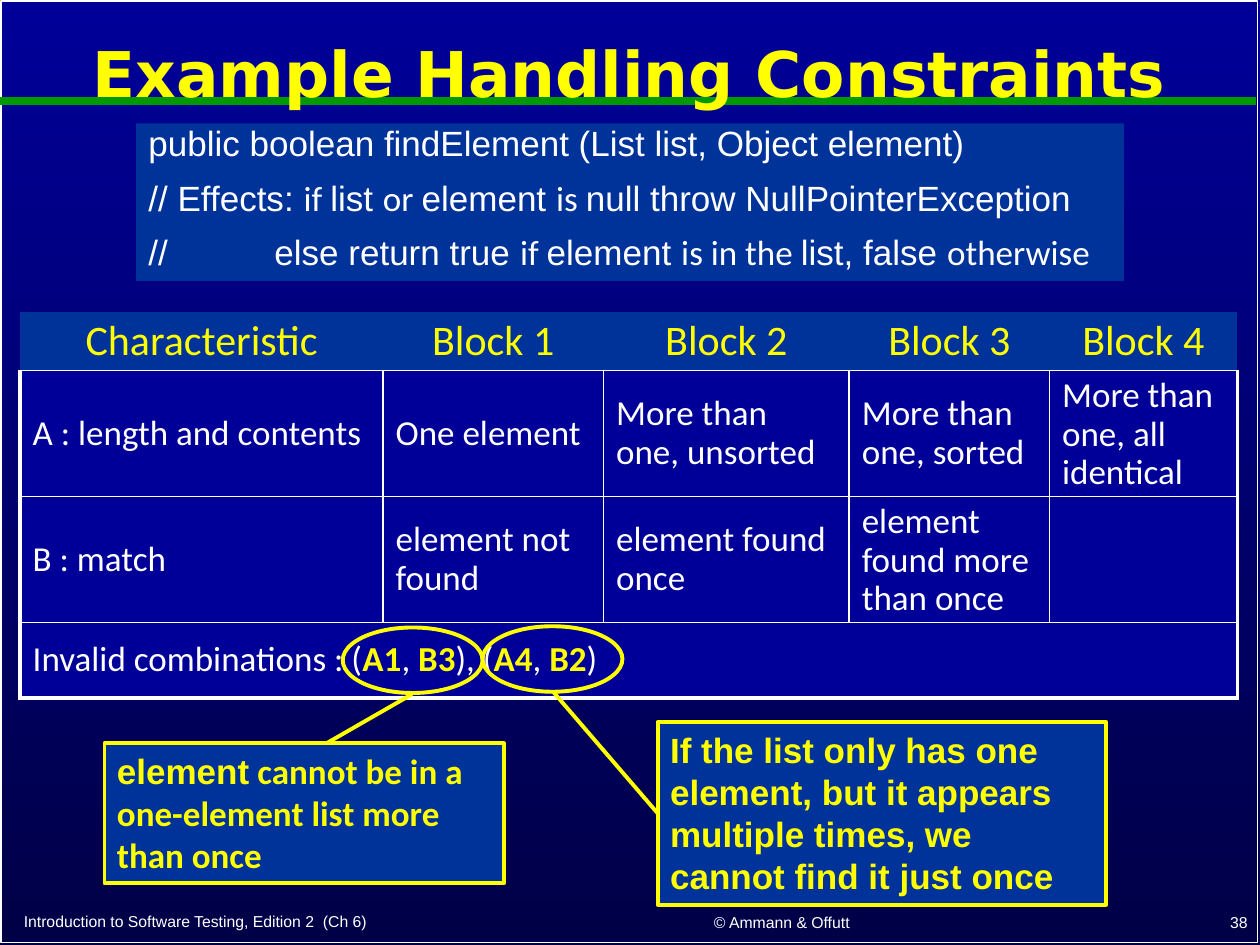
from dataclasses import dataclass

from lxml.etree import SubElement
from pptx import Presentation
from pptx.dml.color import RGBColor
from pptx.enum.shapes import MSO_CONNECTOR, MSO_SHAPE
from pptx.enum.text import MSO_ANCHOR, PP_ALIGN
from pptx.oxml.ns import qn
from pptx.util import Inches, Pt

COLORS = {
    "white": "FFFFFF", "yellow": "FFFF00", "green": "009900",
    "panel": "003399", "cell": "000099", "night": "000047",
}
NO_GRID_STYLE = "{2D5ABB26-0587-4C30-8999-92F81FD0307C}"
THIN, THICK = 1, 2.25


@dataclass
class Run:
    text: str
    font: str = "Arial"
    color: str = "white"
    bold: bool = False


@dataclass
class Callout:
    ellipse: tuple
    box: tuple
    line_start: tuple
    line_end: tuple
    joins_left_side: bool
    runs: list


def rgb(name: str) -> RGBColor:
    return RGBColor.from_string(COLORS[name])


def write_text(frame, paragraphs, *, size=20, align=PP_ALIGN.LEFT, spacing=1.0,
               before=0, anchor=MSO_ANCHOR.TOP, wrap=True):
    """Write lists of runs, one list a paragraph."""
    frame.word_wrap = wrap
    frame.vertical_anchor = anchor
    for index, runs in enumerate(paragraphs):
        paragraph = frame.add_paragraph() if index else frame.paragraphs[0]
        paragraph.alignment = align
        paragraph.line_spacing = spacing
        paragraph.space_before = Pt(before)
        for item in runs:
            run = paragraph.add_run()
            run.text = item.text
            run.font.name = item.font
            run.font.size = Pt(size)
            run.font.bold = item.bold
            run.font.color.rgb = rgb(item.color)


def add_label(slide, box, run: Run, **text_format):
    label = slide.shapes.add_textbox(*map(Inches, box))
    write_text(label.text_frame, [[run]], **text_format)


def add_outline(slide, kind, box, *, fill=None, line=None, width=THICK):
    shape = slide.shapes.add_shape(kind, *map(Inches, box))
    shape.shadow.inherit = False
    if fill:
        shape.fill.solid()
        shape.fill.fore_color.rgb = rgb(fill)
    else:
        shape.fill.background()
    if line:
        shape.line.color.rgb = rgb(line)
        shape.line.width = Pt(width)
    else:
        shape.line.fill.background()
    return shape


def add_line(slide, start, end, color: str, width: float):
    line = slide.shapes.add_connector(MSO_CONNECTOR.STRAIGHT, *map(Inches, start + end))
    line.line.color.rgb = rgb(color)
    line.line.width = Pt(width)
    SubElement(line._element.spPr, qn("a:effectLst"))
    return line


def add_callout(slide, callout: Callout):
    add_outline(slide, MSO_SHAPE.OVAL, callout.ellipse, line="yellow")
    line = add_line(slide, callout.line_start, callout.line_end, "yellow", THICK)
    box = add_outline(slide, MSO_SHAPE.RECTANGLE, callout.box, fill="panel", line="yellow")
    write_text(box.text_frame, [callout.runs])
    if callout.joins_left_side:
        line.end_connect(box, 1)


def style_cell(cell, fill: str, borders: dict):
    properties = cell._tc.get_or_add_tcPr()
    for side in "LRTB":
        if side in borders:
            line = SubElement(properties, qn(f"a:ln{side}"), w=str(Pt(borders[side])))
            solid = SubElement(line, qn("a:solidFill"))
            SubElement(solid, qn("a:srgbClr"), val=COLORS["white"])
    cell.fill.solid()
    cell.fill.fore_color.rgb = rgb(fill)


def add_partition_table(slide, rows, combinations, widths, heights):
    last_row, last_column = len(heights) - 1, len(widths) - 1
    frame = slide.shapes.add_table(len(heights), len(widths), Inches(0.16), Inches(2.48),
                                   Inches(sum(widths)), Inches(sum(heights)))
    table = frame.table
    table.first_row = table.horz_banding = False
    table._tbl.tblPr.find(qn("a:tableStyleId")).text = NO_GRID_STYLE
    for column, width in zip(table.columns, widths):
        column.width = Inches(width)
    for row, height in zip(table.rows, heights):
        row.height = Inches(height)
    table.cell(last_row, 0).merge(table.cell(last_row, last_column))

    for r in range(last_row + 1):
        for c in range(last_column + 1):
            cell = table.cell(r, c)
            if r == 0:
                style_cell(cell, "panel", {"B": THIN})
            else:
                borders = {"T": THIN, "B": THICK if r == last_row else THIN}
                if r < last_row or c == 0:
                    borders["L"] = THIN if c else THICK
                if r < last_row or c in (0, last_column):
                    borders["R"] = THICK if c == last_column or r == last_row else THIN
                style_cell(cell, "cell", borders)
            cell.vertical_anchor = MSO_ANCHOR.MIDDLE
            if r < last_row and rows[r][c]:
                run = Run(rows[r][c], "Calibri", "white" if r else "yellow")
                write_text(cell.text_frame, [[run]], size=20 if r else 24, spacing=0.9,
                           align=PP_ALIGN.LEFT if r else PP_ALIGN.CENTER,
                           anchor=MSO_ANCHOR.MIDDLE)
    write_text(table.cell(last_row, 0).text_frame, [combinations], spacing=0.9,
               anchor=MSO_ANCHOR.MIDDLE)


def main():
    presentation = Presentation()
    presentation.slide_width, presentation.slide_height = Inches(10), Inches(7.5)
    slide = presentation.slides.add_slide(presentation.slide_layouts[6])

    # Background, frame and title rule
    background = slide.background.fill
    background.gradient()
    background.gradient_angle = 270
    for stop, color in zip(background.gradient_stops, ("cell", "night")):
        stop.color.rgb = rgb(color)
    add_outline(slide, MSO_SHAPE.RECTANGLE, (0.01, 0.01, 9.97, 7.47), line="white", width=THIN)
    add_line(slide, (0, 0.8), (9.97, 0.8), "green", 4.5)

    # Footer and title
    footers = [
        ((4.62, 7.17, 3.17, 0.27), "© Ammann & Offutt", PP_ALIGN.CENTER),
        ((7.92, 7.16, 2.08, 0.28), "38", PP_ALIGN.RIGHT),
        ((0.09, 7.18, 4.31, 0.26), "Introduction to Software Testing, Edition 2  (Ch 6)", PP_ALIGN.LEFT),
    ]
    for box, text, align in footers:
        add_label(slide, box, Run(text), size=9, align=align, anchor=MSO_ANCHOR.BOTTOM)
    add_label(slide, (0.09, 0.11, 9.81, 1),
              Run("Example Handling Constraints", "DejaVu Sans", "yellow", True),
              size=36, align=PP_ALIGN.CENTER, spacing=0.9, anchor=MSO_ANCHOR.MIDDLE)

    # Method signature and its effects
    code = add_outline(slide, MSO_SHAPE.RECTANGLE, (1.08, 0.98, 7.84, 1.25), fill="panel")
    write_text(code.text_frame, [
        [Run("public boolean findElement (List list, Object element)")],
        [Run("// Effects: "), Run("if ", "Calibri"), Run("list "), Run("or ", "Calibri"),
         Run("element "), Run("is ", "Calibri"), Run("null throw NullPointerException")],
        [Run("//\telse return true "), Run("if ", "Calibri"), Run("element "),
         Run("is in the ", "Calibri"), Run("list, false "), Run("otherwise", "Calibri")],
    ], spacing=0.8, before=12)
    tabs = SubElement(code.text_frame.paragraphs[2]._p.get_or_add_pPr(), qn("a:tabLst"))
    SubElement(tabs, qn("a:tab"), pos=str(Inches(1)), algn="l")

    # Characteristics, blocks and invalid combinations
    rows = [
        ["Characteristic"] + [f"Block {number}" for number in range(1, 5)],
        ["A : length and contents", "One element", "More than one, unsorted",
         "More than one, sorted", "More than one, all identical"],
        ["B : match", "element not found", "element found once",
         "element found more than once", ""],
    ]
    pieces = ["Invalid combinations : (", "A1", ", ", "B3", "), (", "A4", ", ", "B2", ")"]
    combinations = [Run(text, "Calibri", "yellow" if index % 2 else "white", index % 2 == 1)
                    for index, text in enumerate(pieces)]
    add_partition_table(slide, rows, combinations,
                        widths=[2.88, 1.75, 1.95, 1.59, 1.49], heights=[0.46, 1, 1, 0.6])

    # Why each combination is invalid
    callouts = [
        Callout((2.72, 4.98, 1.11, 0.52), (0.83, 5.9, 3.17, 1.11), (3.27, 5.51), (2.59, 5.9), False,
                [Run("element", "Arial", "yellow", True),
                 Run(" cannot be in a one-element list more than once", "Calibri", "yellow", True)]),
        Callout((3.83, 4.97, 1.11, 0.52), (5.22, 5.73, 3.56, 1.45), (4.39, 5.49), (5.22, 6.44), True,
                [Run("If the list only has one element, but it appears multiple times, "
                     "we cannot find it just once", "Arial", "yellow", True)]),
    ]
    for callout in callouts:
        add_callout(slide, callout)

    presentation.save("out.pptx")


if __name__ == "__main__":
    main()
